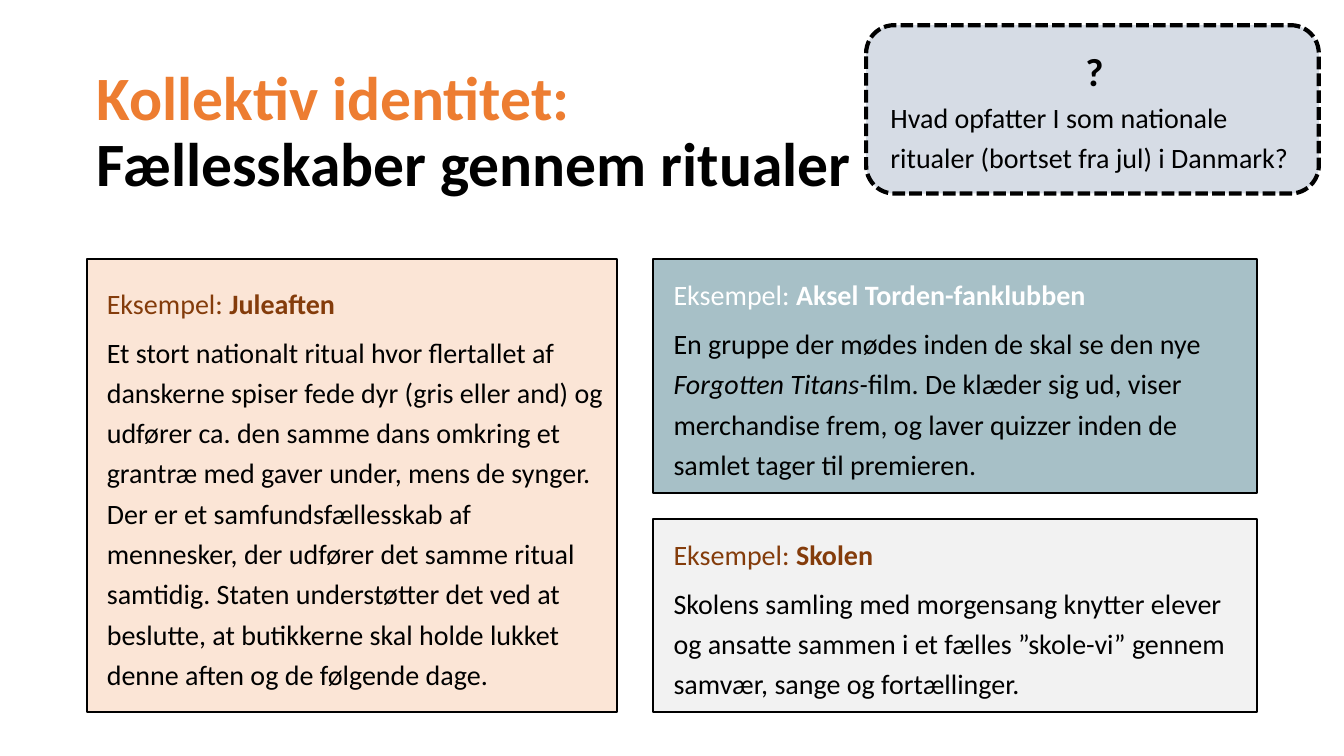
import dataclasses

import pptx
import pptx.dml.color
import pptx.enum.dml
import pptx.enum.shapes
import pptx.enum.text
import pptx.util

SHAPES = pptx.enum.shapes.MSO_SHAPE
ANCHOR = pptx.enum.text.MSO_ANCHOR
ALIGN = pptx.enum.text.PP_ALIGN
Inches = pptx.util.Inches


@dataclasses.dataclass(frozen=True)
class Theme:
    font: str = "Calibri"
    title_size: int = 44
    question_size: int = 28
    body_size: int = 20
    text: str = "000000"
    accent: str = "ED7D31"
    heading: str = "843C0B"
    light: str = "FFFFFF"
    peach: str = "FBE5D6"
    teal: str = "A7C0C7"
    grey: str = "F2F2F2"
    blue: str = "D6DCE5"


@dataclasses.dataclass(frozen=True)
class Grid:
    """Two columns of examples; the right one is split into two rows."""
    width: float = 13.33
    height: float = 7.5
    left: float = 0.86
    top: float = 2.57
    columns: tuple = (5.26, 5.99)
    rows: tuple = (2.32, 1.91)
    column_gap: float = 0.36
    row_gap: float = 0.26

    def cell(self, column, row, row_span=1):
        x = self.left + sum(self.columns[:column]) + column * self.column_gap
        y = self.top + sum(self.rows[:row]) + row * self.row_gap
        height = sum(self.rows[row:row + row_span]) + (row_span - 1) * self.row_gap
        return x, y, self.columns[column], height


THEME = Theme()
GRID = Grid()


def rgb(color):
    return pptx.dml.color.RGBColor.from_string(color)


def add_span(para, text, *, size=THEME.body_size, color=THEME.text, bold=False, italic=False):
    span = para.add_run()
    span.text = text
    font = span.font
    font.name, font.size = THEME.font, pptx.util.Pt(size)
    font.bold, font.italic = bold, italic
    font.color.rgb = rgb(color)


def format_para(para, *, align=ALIGN.LEFT, spacing=1.2, before=0):
    para.alignment = align
    para.line_spacing = spacing
    para.space_before = pptx.util.Pt(before)
    return para


def add_box(page, kind, place, *, fill, line_width, insets, anchor):
    box = page.shapes.add_shape(kind, *map(Inches, place))
    box.shadow.inherit = False
    box.fill.solid()
    box.fill.fore_color.rgb = rgb(fill)
    box.line.color.rgb = rgb(THEME.text)
    box.line.width = pptx.util.Pt(line_width)
    frame = box.text_frame
    frame.word_wrap = True
    frame.vertical_anchor = anchor
    (frame.margin_left, frame.margin_top,
     frame.margin_right, frame.margin_bottom) = map(Inches, insets)
    return box


def add_example(page, place, name, body, *, fill, heading=THEME.heading):
    """Add a box with a coloured heading; body is a list of (text, italic) pairs."""
    box = add_box(page, SHAPES.RECTANGLE, place, fill=fill, line_width=1.5,
                  insets=(0.2, 0.12, 0.12, 0.12), anchor=ANCHOR.MIDDLE)
    para = format_para(box.text_frame.paragraphs[0], before=6)
    add_span(para, "Eksempel: ", color=heading)
    add_span(para, name, color=heading, bold=True)
    para = format_para(box.text_frame.add_paragraph(), before=6)
    for text, italic in body:
        add_span(para, text, italic=italic)


def add_question(page, place, text):
    box = add_box(page, SHAPES.ROUNDED_RECTANGLE, place, fill=THEME.blue, line_width=3,
                  insets=(0.16, 0.04, 0.12, 0.12), anchor=ANCHOR.TOP)
    box.line.dash_style = pptx.enum.dml.MSO_LINE.SQUARE_DOT
    para = format_para(box.text_frame.paragraphs[0], align=ALIGN.CENTER)
    add_span(para, "?", size=THEME.question_size, bold=True)
    add_span(format_para(box.text_frame.add_paragraph()), text)


def set_title(page, place, topic, subject):
    title = page.shapes.title
    title.left, title.top, title.width, title.height = map(Inches, place)
    frame = title.text_frame
    frame.word_wrap = True
    frame.auto_size = pptx.enum.text.MSO_AUTO_SIZE.NONE
    frame.vertical_anchor = ANCHOR.MIDDLE
    para = format_para(frame.paragraphs[0], spacing=0.9)
    add_span(para, topic, size=THEME.title_size, color=THEME.accent, bold=True)
    para.add_line_break()
    add_span(para, subject, size=THEME.title_size, bold=True)


def main():
    deck = pptx.Presentation()
    deck.slide_width, deck.slide_height = Inches(GRID.width), Inches(GRID.height)
    page = deck.slides.add_slide(deck.slide_layouts.get_by_name("Title Only"))

    set_title(page, (GRID.left, 0.6, 11.5, 1.45),
              "Kollektiv identitet:", "Fællesskaber gennem ritualer")
    add_example(page, GRID.cell(0, 0, row_span=2), "Juleaften", [
        ("Et stort nationalt ritual hvor flertallet af danskerne spiser fede dyr "
         "(gris eller and) og udfører ca. den samme dans omkring et grantræ med gaver "
         "under, mens de synger. Der er et samfundsfællesskab af mennesker, der udfører "
         "det samme ritual samtidig. Staten understøtter det ved at beslutte, at "
         "butikkerne skal holde lukket denne aften og de følgende dage.", False),
    ], fill=THEME.peach)
    add_example(page, GRID.cell(1, 0), "Aksel Torden-fanklubben", [
        ("En gruppe der mødes inden de skal se den nye ", False),
        ("Forgotten Titans-", True),
        ("film. De klæder sig ud, viser merchandise frem, og laver quizzer inden de "
         "samlet tager til premieren.", False),
    ], fill=THEME.teal, heading=THEME.light)
    add_example(page, GRID.cell(1, 1), "Skolen", [
        ("Skolens samling med morgensang knytter elever og ansatte sammen i et fælles "
         "”skole-vi” gennem samvær, sange og fortællinger.", False),
    ], fill=THEME.grey)
    add_question(page, (8.59, 0.25, 4.49, 1.67),
                 "Hvad opfatter I som nationale ritualer (bortset fra jul) i Danmark?")

    deck.save("out.pptx")


if __name__ == "__main__":
    main()
